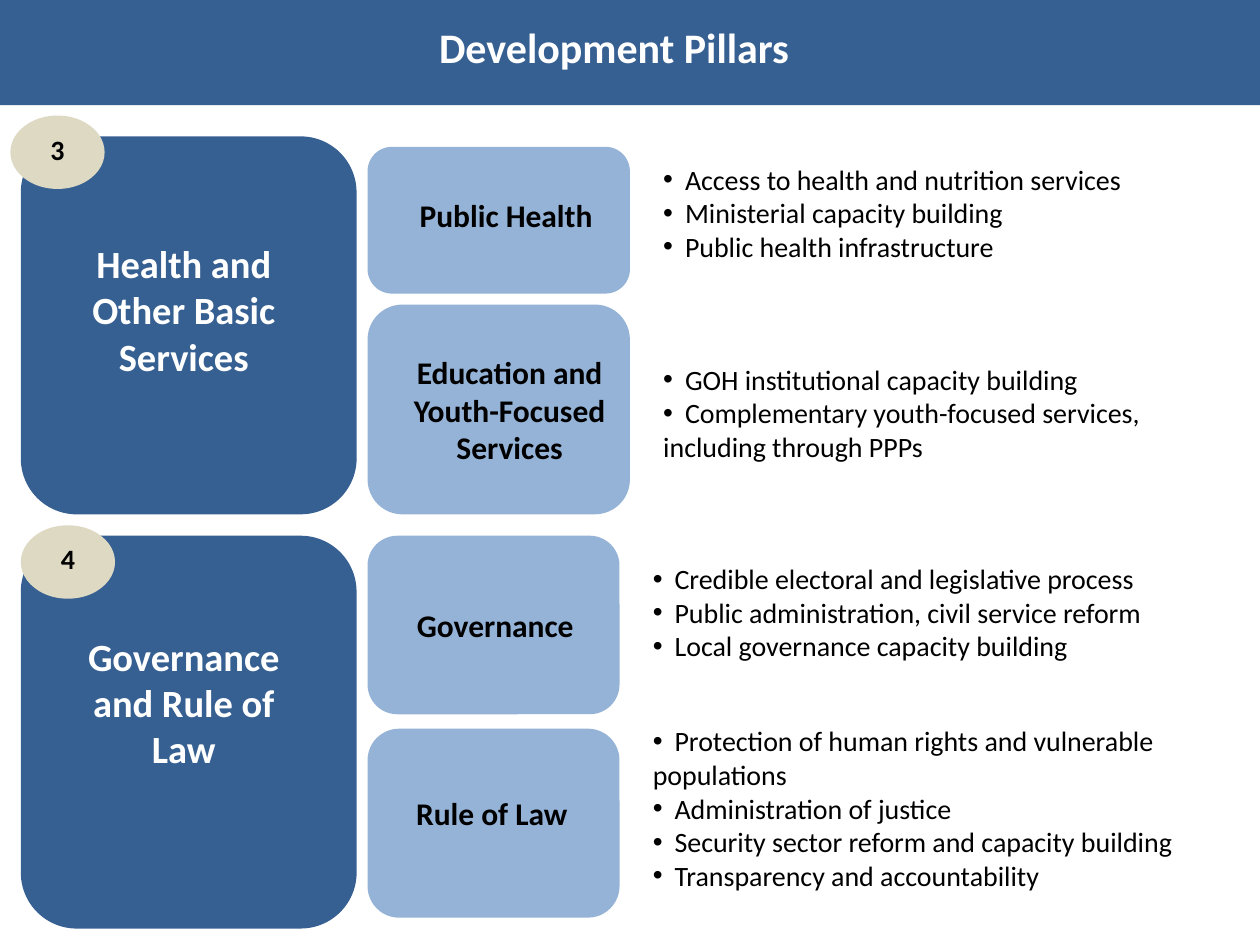
from dataclasses import dataclass

from lxml import etree
from pptx import Presentation
from pptx.dml.color import RGBColor
from pptx.enum.shapes import MSO_SHAPE
from pptx.enum.text import MSO_ANCHOR, PP_ALIGN
from pptx.oxml.ns import qn
from pptx.util import Cm, Pt

RECTANGLE, ROUNDED, OVAL = MSO_SHAPE.RECTANGLE, MSO_SHAPE.ROUNDED_RECTANGLE, MSO_SHAPE.OVAL
TOP, MIDDLE = MSO_ANCHOR.TOP, MSO_ANCHOR.MIDDLE
LEFT, CENTER = PP_ALIGN.LEFT, PP_ALIGN.CENTER

COLORS = {"navy": "376092", "sky": "95B3D7", "sand": "DDD9C3", "white": "FFFFFF", "black": "000000"}
STYLES = {
    "title": {"size": Pt(24), "bold": True, "color": "white", "align": CENTER, "anchor": MIDDLE},
    "pillar": {"size": Pt(22), "bold": True, "color": "white", "align": CENTER, "anchor": MIDDLE},
    "sector": {"size": Pt(18), "bold": True, "color": "black", "align": CENTER, "anchor": TOP},
    "badge": {"size": Pt(16), "bold": True, "color": "black", "align": CENTER, "anchor": TOP},
    "bullets": {"size": Pt(16), "bold": False, "color": "black", "align": LEFT, "anchor": TOP},
}
SLIDE_WIDTH, SLIDE_HEIGHT = 25.4, 19.05
BULLET_GAP = 0.44


@dataclass
class Sector:
    """A sector box with its label and bullets, offset from the box corner."""
    name: str
    top: float
    height: float
    label_offset: tuple
    bullets_top: float
    bullets_size: tuple
    bullets: list


@dataclass
class Pillar:
    """A numbered pillar with its sectors."""
    number: str
    name: str
    box: tuple
    label_top: float
    badge_offset: tuple
    sector_width: float
    sectors: list


PILLARS = [
    Pillar("3", "Health and Other Basic Services", (0.42, 2.75, 6.77, 7.62), 2.75, (-0.21, -0.42), 5.29, [
        Sector("Public Health", 0.21, 2.96, (0.57, 0.87), 0.19, (10.16, 2.99), [
            "Access to health and nutrition services",
            "Ministerial capacity building",
            "Public health infrastructure"]),
        Sector("Education and Youth-Focused Services", 3.39, 4.23, (0.64, 0.85), 1.04, (10.36, 2.99), [
            "GOH institutional capacity building",
            "Complementary youth-focused services, including through PPPs"]),
    ]),
    Pillar("4", "Governance and Rule of Law", (0.42, 10.8, 6.77, 7.92), 2.62, (0, -0.21), 5.08, [
        Sector("Governance", 0, 3.6, (0.35, 1.29), 0.4, (11.43, 2.99), [
            "Credible electoral and legislative process",
            "Public administration, civil service reform",
            "Local governance capacity building"]),
        Sector("Rule of Law", 3.89, 3.81, (0.28, 1.19), -0.22, (12.5, 4.36), [
            "Protection of human rights and vulnerable populations",
            "Administration of justice",
            "Security sector reform and capacity building",
            "Transparency and accountability"]),
    ]),
]


def add_box(slide, kind, box, color):
    """Add a filled shape without outline or shadow."""
    shape = slide.shapes.add_shape(kind, *map(Cm, box))
    shape.shadow.inherit = False
    shape.fill.solid()
    shape.fill.fore_color.rgb = RGBColor.from_string(COLORS[color])
    shape.line.fill.background()


def add_bullet(paragraph):
    """Give a paragraph a bullet, with a tab stop before its first line."""
    properties = paragraph._p.get_or_add_pPr()
    properties.set("marL", "0")
    properties.set("indent", "0")
    etree.SubElement(properties, qn("a:buFont"), typeface="Arial")
    etree.SubElement(properties, qn("a:buChar"), char="•")
    stops = etree.SubElement(properties, qn("a:tabLst"))
    etree.SubElement(stops, qn("a:tab"), pos=str(Cm(BULLET_GAP)), algn="l")


def add_text(slide, box, lines, style_name):
    """Add a wrapping text box with one paragraph per line."""
    style = STYLES[style_name]
    frame = slide.shapes.add_textbox(*map(Cm, box)).text_frame
    frame.word_wrap = True
    frame.vertical_anchor = style["anchor"]
    for index, line in enumerate(lines):
        paragraph = frame.paragraphs[0] if index == 0 else frame.add_paragraph()
        paragraph.alignment = style["align"]
        if style_name == "bullets":
            add_bullet(paragraph)
            line = "\t" + line
        run = paragraph.add_run()
        run.text = line
        for name, value in {"name": "Calibri", "size": style["size"], "bold": style["bold"]}.items():
            setattr(run.font, name, value)
        run.font.color.rgb = RGBColor.from_string(COLORS[style["color"]])


def add_title(slide, box):
    """Add the title band."""
    left, top, width, height = box
    add_box(slide, RECTANGLE, box, "navy")
    add_text(slide, (left + 1.69, top + 0.21, width - 4.02, height - 0.64), ["Development Pillars"], "title")


def add_badge(slide, box, number):
    """Add an oval with a pillar number."""
    left, top, width, height = box
    add_box(slide, OVAL, box, "sand")
    add_text(slide, (left + 0.42, top + 0.21, width - 0.84, height - 0.55), [number], "badge")


def add_sector(slide, box, sector):
    """Add a sector box, its label and the bullets to its right."""
    left, top, width, height = box
    label_left, label_top = sector.label_offset
    add_box(slide, ROUNDED, box, "sky")
    add_text(slide, (left + label_left, top + label_top, 4.45, 1.03), [sector.name], "sector")
    add_text(slide, (left + width + 0.42, top + sector.bullets_top, *sector.bullets_size),
             sector.bullets, "bullets")


def add_pillar(slide, box, pillar):
    """Add a pillar box with its label, sectors and number badge."""
    left, top, width, height = box
    add_box(slide, ROUNDED, box, "navy")
    add_text(slide, (left + 0.64, top + pillar.label_top, width - 1.48, 1.48), [pillar.name], "pillar")
    for sector in pillar.sectors:
        sector_box = (left + width + 0.22, top + sector.top, pillar.sector_width, sector.height)
        add_sector(slide, sector_box, sector)
    badge_left, badge_top = pillar.badge_offset
    add_badge(slide, (left + badge_left, top + badge_top, 1.9, 1.48), pillar.number)


def main():
    """Build and save the slide."""
    presentation = Presentation()
    presentation.slide_width, presentation.slide_height = Cm(SLIDE_WIDTH), Cm(SLIDE_HEIGHT)
    slide = presentation.slides.add_slide(presentation.slide_layouts[6])
    for pillar in PILLARS:
        add_pillar(slide, pillar.box, pillar)
    add_title(slide, (0, 0, SLIDE_WIDTH, 2.12))
    presentation.save("out.pptx")


if __name__ == "__main__":
    main()
